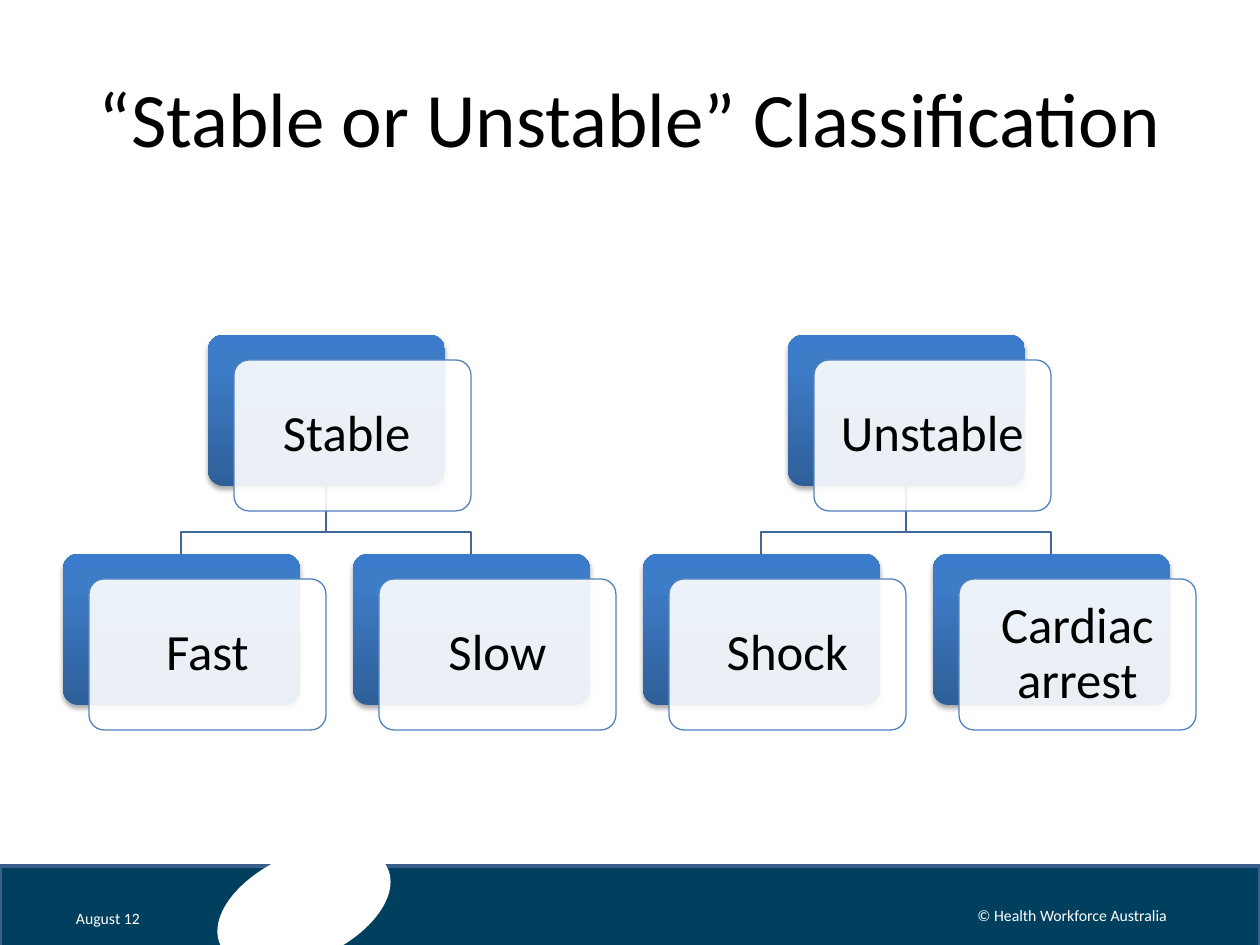
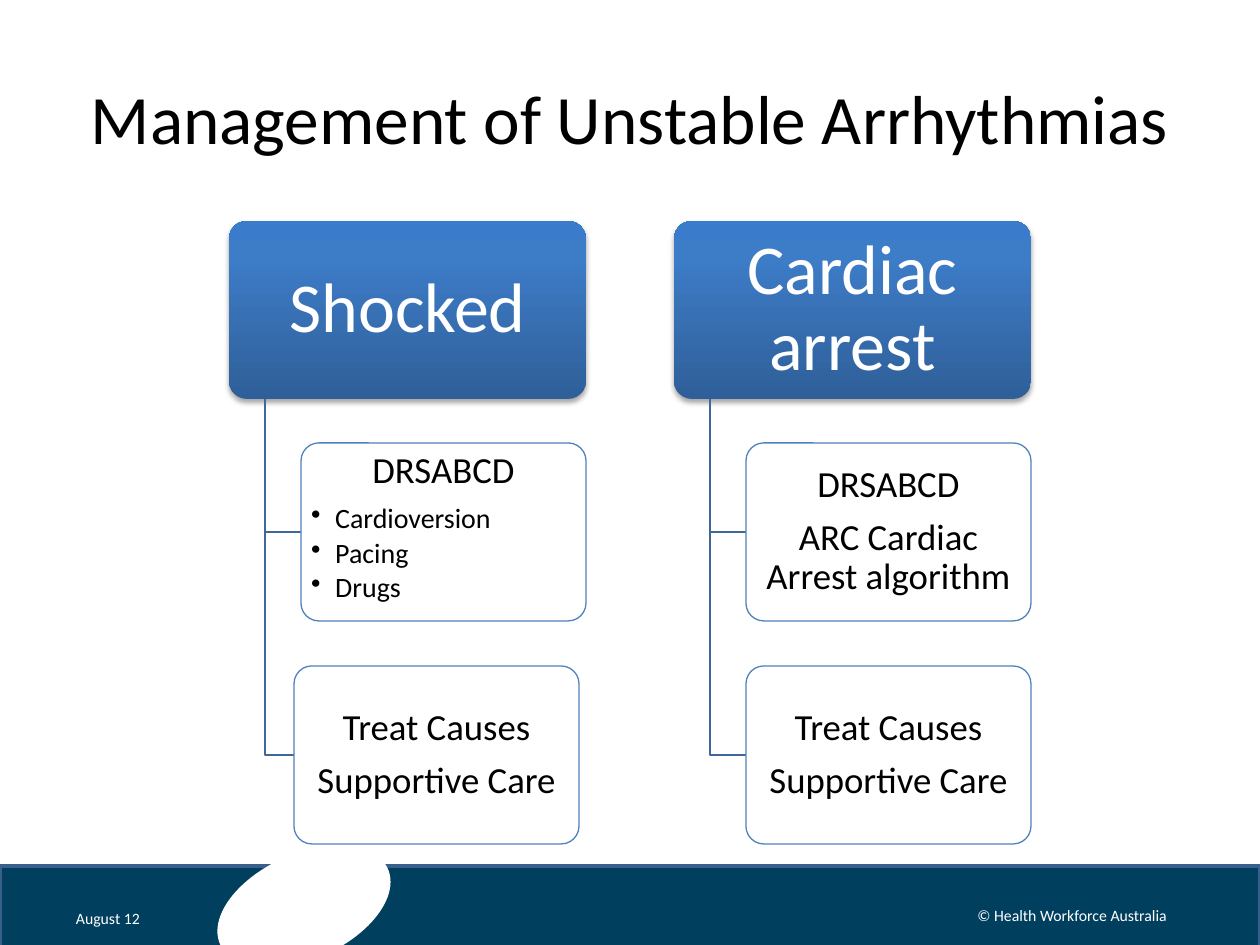
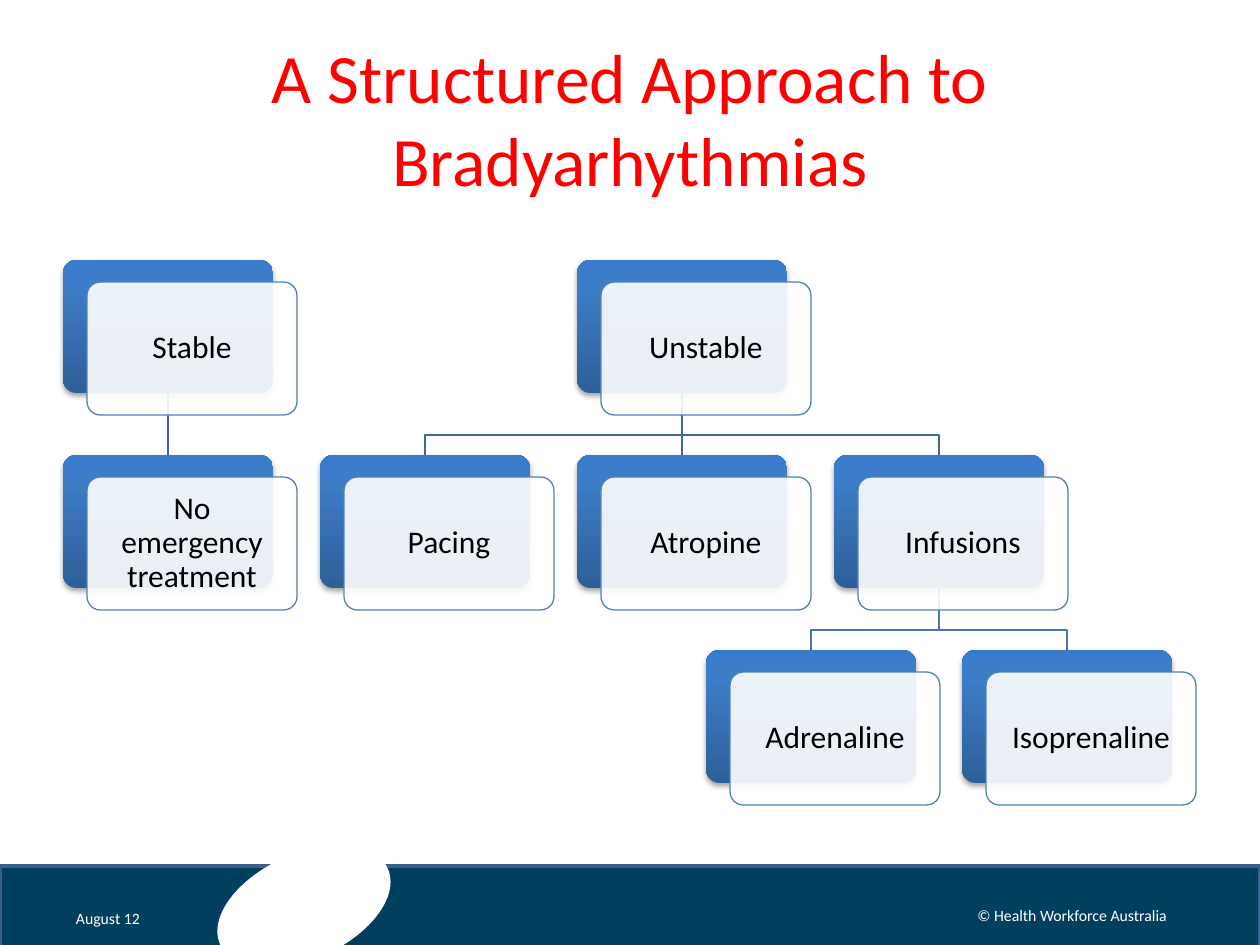
from copy import deepcopy
from dataclasses import dataclass

from lxml.etree import SubElement
from pptx import Presentation
from pptx.dml.color import RGBColor
from pptx.enum.shapes import MSO_CONNECTOR as Connector, MSO_SHAPE as Shape
from pptx.enum.text import MSO_ANCHOR as Anchor, PP_ALIGN as Align
from pptx.oxml.ns import qn
from pptx.util import Emu, Pt

# Shared style
PX = 914400 / 126
FONT = "Calibri"
BLACK, WHITE, RED = "000000", "FFFFFF", "FF0000"
NAVY, BAND_EDGE = "003F5E", "3A5F8C"
CARD_EDGE, LINK, DEEP_LINK = "4F81BD", "3F6797", "4875AC"
BLUE_STOPS = ((0, "2F5F99"), (0.8, "3D7CC7"), (1, "3A7CCB"))


@dataclass
class TreeGrid:
    top: int
    column_pitch: int
    row_pitch: int
    width: int
    height: int
    shift_x: int
    shift_y: int
    text_size: int
    inset: int
    left: int = 63

    def place(self, column, row):
        return round(self.left + column * self.column_pitch), self.top + row * self.row_pitch


def px(*lengths):
    return [Emu(round(length * PX)) for length in lengths]


def rgb(color):
    return RGBColor.from_string(color)


class Deck:
    def __init__(self):
        self.presentation = Presentation()
        self.presentation.slide_width, self.presentation.slide_height = px(1260, 945)
        self.slide = None

    def new_slide(self, title, size=39.6, color=BLACK):
        self.slide = self.presentation.slides.add_slide(self.presentation.slide_layouts[6])
        self.shape(Shape.RECTANGLE, (0, 866, 1260, 82), NAVY, BAND_EDGE, 2)
        self.shape(Shape.OVAL, (212, 854, 184, 105), WHITE).rotation = 335.7
        self.text_box((63, 38, 1134, 158), title, size, color)
        self.text_box((63, 900, 101, 36), "August 12", 9, WHITE, Align.LEFT)
        self.text_box((937, 890, 270, 50), "© Health Workforce Australia", 9, WHITE)

    # Text
    def set_text(self, shape, text, size, color, align=Align.CENTER, anchor=Anchor.MIDDLE,
                 insets=(13, 6), spaced=False, bullets_from=None):
        frame = shape.text_frame
        frame.word_wrap = True
        frame.vertical_anchor = anchor
        frame.margin_left = frame.margin_right = px(insets[0])[0]
        frame.margin_top = frame.margin_bottom = px(insets[1])[0]
        frame.text = text
        for index, paragraph in enumerate(frame.paragraphs):
            bulleted = bullets_from is not None and index >= bullets_from
            point_size = 16 if bulleted else size
            paragraph.alignment = Align.LEFT if bulleted else align
            if spaced:
                paragraph.line_spacing = 0.9
                paragraph.space_after = Pt(point_size * (0.15 if bulleted else 0.35))
            if bulleted:
                self.bullet(paragraph)
            for run in paragraph.runs:
                run.font.name = FONT
                run.font.size = Pt(point_size)
                run.font.color.rgb = rgb(color)

    def bullet(self, paragraph):
        properties = paragraph._p.get_or_add_pPr()
        hang = px(24)[0]
        properties.set("marL", str(hang))
        properties.set("indent", str(-hang))
        SubElement(properties, qn("a:buChar")).set("char", "•")

    def text_box(self, box, text, size, color, align=Align.CENTER):
        self.set_text(self.slide.shapes.add_textbox(*px(*box)), text, size, color, align)

    # Shapes
    def shape(self, kind, box, fill=None, edge=None, edge_width=0.75):
        shape = self.slide.shapes.add_shape(kind, *px(*box))
        shape.shadow.inherit = False
        if kind == Shape.ROUNDED_RECTANGLE:
            shape.adjustments[0] = 0.1
        if fill:
            shape.fill.solid()
            shape.fill.fore_color.rgb = rgb(fill)
        if edge:
            shape.line.color.rgb = rgb(edge)
            shape.line.width = Pt(edge_width)
        else:
            shape.line.fill.background()
        return shape

    def blue_block(self, box):
        block = self.shape(Shape.ROUNDED_RECTANGLE, box)
        properties = block.element.spPr
        block.fill.gradient()
        block.fill.gradient_angle = 90
        stops = properties.find(".//" + qn("a:gsLst"))
        stops.append(deepcopy(stops[0]))
        for stop, (position, color) in zip(block.fill.gradient_stops, BLUE_STOPS):
            stop.position = position
            stop.color.rgb = rgb(color)
        shadow = SubElement(properties.find(qn("a:effectLst")), qn("a:outerShdw"),
                            blurRad=str(Pt(3.1)), dist=str(Pt(1.8)), dir="5400000",
                            rotWithShape="0")
        shadow_color = SubElement(shadow, qn("a:srgbClr"), val=BLACK)
        SubElement(shadow_color, qn("a:alpha"), val="35000")
        return block

    def card(self, box, text, size, insets, **text_style):
        card = self.shape(Shape.ROUNDED_RECTANGLE, box, WHITE, CARD_EDGE)
        fill_color = card.element.spPr.find(qn("a:solidFill") + "/" + qn("a:srgbClr"))
        SubElement(fill_color, qn("a:alpha"), val="90000")
        self.set_text(card, text, size, BLACK, insets=insets, spaced=True, **text_style)

    def link(self, points, color=LINK):
        if len(points) == 2:
            line = self.slide.shapes.add_connector(Connector.STRAIGHT, *px(*points[0], *points[1]))
            SubElement(line.element.spPr, qn("a:effectLst"))
        else:
            builder = self.slide.shapes.build_freeform(*points[0], scale=PX)
            builder.add_line_segments(points[1:], close=False)
            line = builder.convert_to_shape()
            line.shadow.inherit = False
            line.fill.background()
        line.line.color.rgb = rgb(color)
        line.line.width = Pt(0.75)

    # Tree of blue blocks, each with a card in front
    def tree(self, grid, nodes):
        spots = {name: (column, row) for name, column, row, _ in nodes}
        for name, column, row, parent in nodes:
            if parent is None:
                continue
            half = grid.width // 2
            child_x, child_y = grid.place(column, row)
            parent_x, parent_y = grid.place(*spots[parent])
            start = (parent_x + half, parent_y + grid.height)
            end = (child_x + half, child_y)
            bend = (start[1] + grid.shift_y + child_y) // 2
            points = [start, end]
            if start[0] != end[0]:
                points[1:1] = [(start[0], bend), (end[0], bend)]
            self.link(points, LINK if row == 1 else DEEP_LINK)
        for name, column, row, _ in nodes:
            x, y = grid.place(column, row)
            self.blue_block((x, y, grid.width, grid.height))
            self.card((x + grid.shift_x, y + grid.shift_y, grid.width, grid.height),
                      name, grid.text_size, (grid.inset, grid.inset))

    # Column with a blue heading and cards hanging from a trunk line
    def hanging_column(self, x, heading, cards):
        top, width, height = 221, 357, 178
        block = self.blue_block((x, top, width, height))
        self.set_text(block, heading, 40, WHITE, insets=(10, 8), spaced=True)
        trunk = x + 36
        for card_top, (indent, text, style) in zip((443, 666), cards):
            middle = card_top + height // 2
            self.link([(trunk, top + height), (trunk, middle), (x + indent, middle)])
            self.card((x + indent, card_top, 285, height), text, 21, (5, 4), **style)


def main():
    deck = Deck()

    # Slide 1: classification
    deck.new_slide("“Stable or Unstable” Classification", 44)
    deck.tree(TreeGrid(top=335, column_pitch=290, row_pitch=219, width=237, height=151,
                       shift_x=26, shift_y=25, text_size=29, inset=15), [
        ("Stable ", 0.5, 0, None),
        ("Fast", 0, 1, "Stable "),
        ("Slow", 1, 1, "Stable "),
        ("Unstable", 2.5, 0, None),
        ("Shock", 2, 1, "Unstable"),
        ("Cardiac arrest", 3, 1, "Unstable"),
    ])

    # Slide 2: management
    deck.new_slide("Management of Unstable Arrhythmias")
    care = "Treat Causes\nSupportive Care"
    deck.hanging_column(229, "Shocked", [
        (72, "DRSABCD\nCardioversion\nPacing\nDrugs", {"anchor": Anchor.TOP, "bullets_from": 1}),
        (65, care, {}),
    ])
    deck.hanging_column(674, "Cardiac arrest", [
        (72, "DRSABCD\nARC Cardiac Arrest algorithm", {}),
        (72, care, {}),
    ])

    # Slide 3: bradyarrhythmias
    deck.new_slide("A Structured Approach to Bradyarhythmias", color=RED)
    deck.tree(TreeGrid(top=260, column_pitch=257, row_pitch=195, width=210, height=133,
                       shift_x=24, shift_y=22, text_size=18, inset=9), [
        ("Stable", 0, 0, None),
        ("No emergency treatment", 0, 1, "Stable"),
        ("Unstable", 2, 0, None),
        ("Pacing", 1, 1, "Unstable"),
        ("Atropine", 2, 1, "Unstable"),
        ("Infusions", 3, 1, "Unstable"),
        ("Adrenaline", 2.5, 2, "Infusions"),
        ("Isoprenaline", 3.5, 2, "Infusions"),
    ])

    deck.presentation.save("out.pptx")


if __name__ == "__main__":
    main()
